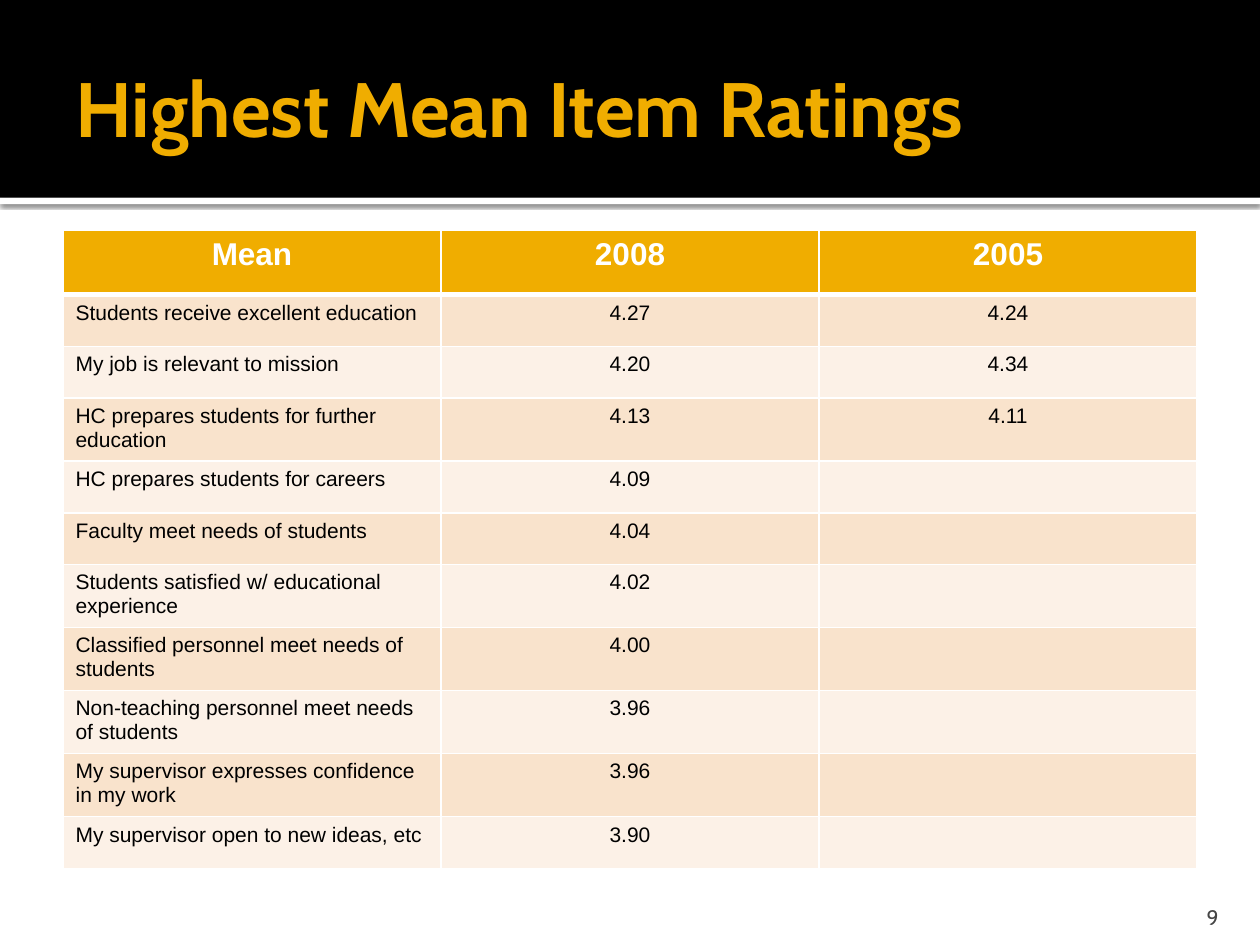
from lxml import etree
from pptx import Presentation
from pptx.dml.color import RGBColor
from pptx.enum.shapes import MSO_SHAPE
from pptx.enum.text import MSO_ANCHOR, PP_ALIGN
from pptx.oxml.ns import qn
from pptx.util import Inches, Pt

RECTANGLE = MSO_SHAPE.RECTANGLE
MIDDLE, BOTTOM = MSO_ANCHOR.MIDDLE, MSO_ANCHOR.BOTTOM
LEFT, CENTER, RIGHT = PP_ALIGN.LEFT, PP_ALIGN.CENTER, PP_ALIGN.RIGHT

COLORS = {
    "gold": "F0AD00",
    "black": "000000",
    "white": "FFFFFF",
    "peach": "F9E3CC",
    "cream": "FCF1E7",
    "gray": "454545",
}
HEADING_FONT, TABLE_FONT = "Cabin", "Arial"
HEADER = ("Mean", "2008", "2005")
RATINGS = [
    ("Students receive excellent education", "4.27", "4.24"),
    ("My job is relevant to mission", "4.20", "4.34"),
    ("HC prepares students for further education", "4.13", "4.11"),
    ("HC prepares students for careers", "4.09", ""),
    ("Faculty meet needs of students", "4.04", ""),
    ("Students satisfied w/ educational experience", "4.02", ""),
    ("Classified personnel meet needs of students", "4.00", ""),
    ("Non-teaching personnel meet needs of students", "3.96", ""),
    ("My supervisor expresses confidence in my work", "3.96", ""),
    ("My supervisor open to new ideas, etc", "3.90", ""),
]


def rgb(name):
    return RGBColor.from_string(COLORS[name])


def write(frame, text, font, size, color, align=LEFT, bold=False):
    frame.text = text
    paragraph = frame.paragraphs[0]
    paragraph.alignment = align
    for target in (paragraph, *paragraph.runs):
        target.font.name = font
        target.font.size = Pt(size)
        target.font.bold = bold
        target.font.color.rgb = rgb(color)


def add_band(slide, top, height, color):
    band = slide.shapes.add_shape(RECTANGLE, 0, Inches(top), Inches(10), Inches(height))
    band.shadow.inherit = False
    band.fill.solid()
    band.fill.fore_color.rgb = rgb(color)
    band.line.fill.background()
    return band


def cast_shadow(band):
    effects = band._element.spPr.find(qn("a:effectLst"))
    shadow = etree.SubElement(effects, qn("a:outerShdw"), blurRad=str(Pt(2.5)),
                              dist=str(Pt(0.8)), dir="5400000", rotWithShape="0")
    tint = etree.SubElement(shadow, qn("a:srgbClr"), val=COLORS["black"])
    etree.SubElement(tint, qn("a:alpha"), val="60000")


def add_label(slide, box, insets, anchor, text, **style):
    label = slide.shapes.add_textbox(*map(Inches, box))
    frame = label.text_frame
    frame.word_wrap = True
    frame.vertical_anchor = anchor
    (frame.margin_left, frame.margin_top,
     frame.margin_right, frame.margin_bottom) = map(Inches, insets)
    write(frame, text, HEADING_FONT, **style)


def set_borders(cell, top, bottom):
    properties = cell._tc.get_or_add_tcPr()
    for side, width in (("L", 1), ("R", 1), ("T", top), ("B", bottom)):
        line = etree.SubElement(properties, qn(f"a:ln{side}"), w=str(Pt(width)))
        fill = etree.SubElement(line, qn("a:solidFill"))
        etree.SubElement(fill, qn("a:srgbClr"), val=COLORS["white"])


def fill_cell(cell, background, text, **style):
    cell.fill.solid()
    cell.fill.fore_color.rgb = rgb(background)
    write(cell.text_frame, text, TABLE_FONT, **style)


def add_ratings_table(slide):
    rows = [HEADER, *RATINGS]
    table = slide.shapes.add_table(len(rows), len(HEADER), Inches(0.5), Inches(1.83),
                                   Inches(9), Inches(4.61)).table
    for r, values in enumerate(rows):
        table.rows[r].height = Inches(0.41 if r else 0.51)
        for c, value in enumerate(values):
            cell = table.cell(r, c)
            set_borders(cell, top=3 if r == 1 else 1, bottom=1 if r else 3)
            if r == 0:
                fill_cell(cell, "gold", value, size=18, color="white",
                          align=CENTER, bold=True)
            else:
                fill_cell(cell, "peach" if r % 2 else "cream", value, size=12,
                          color="black", align=CENTER if c else LEFT)


def main():
    deck = Presentation()
    deck.slide_width, deck.slide_height = Inches(10), Inches(7.5)
    slide = deck.slides.add_slide(deck.slide_layouts[6])
    cast_shadow(add_band(slide, 1.57, 0.05, "white"))
    add_band(slide, 0, 1.57, "black")
    add_label(slide, (0.5, 0.25, 9, 1.75), (0.1, 0.05, 0.05, 0.6), MIDDLE,
              "Highest Mean Item Ratings", size=44, color="gold", bold=True)
    add_ratings_table(slide)
    add_label(slide, (8.97, 7.08, 0.8, 0.3), (0.1, 0.05, 0.1, 0), BOTTOM,
              "9", size=12, color="gray", align=RIGHT)
    deck.save("out.pptx")


if __name__ == "__main__":
    main()
